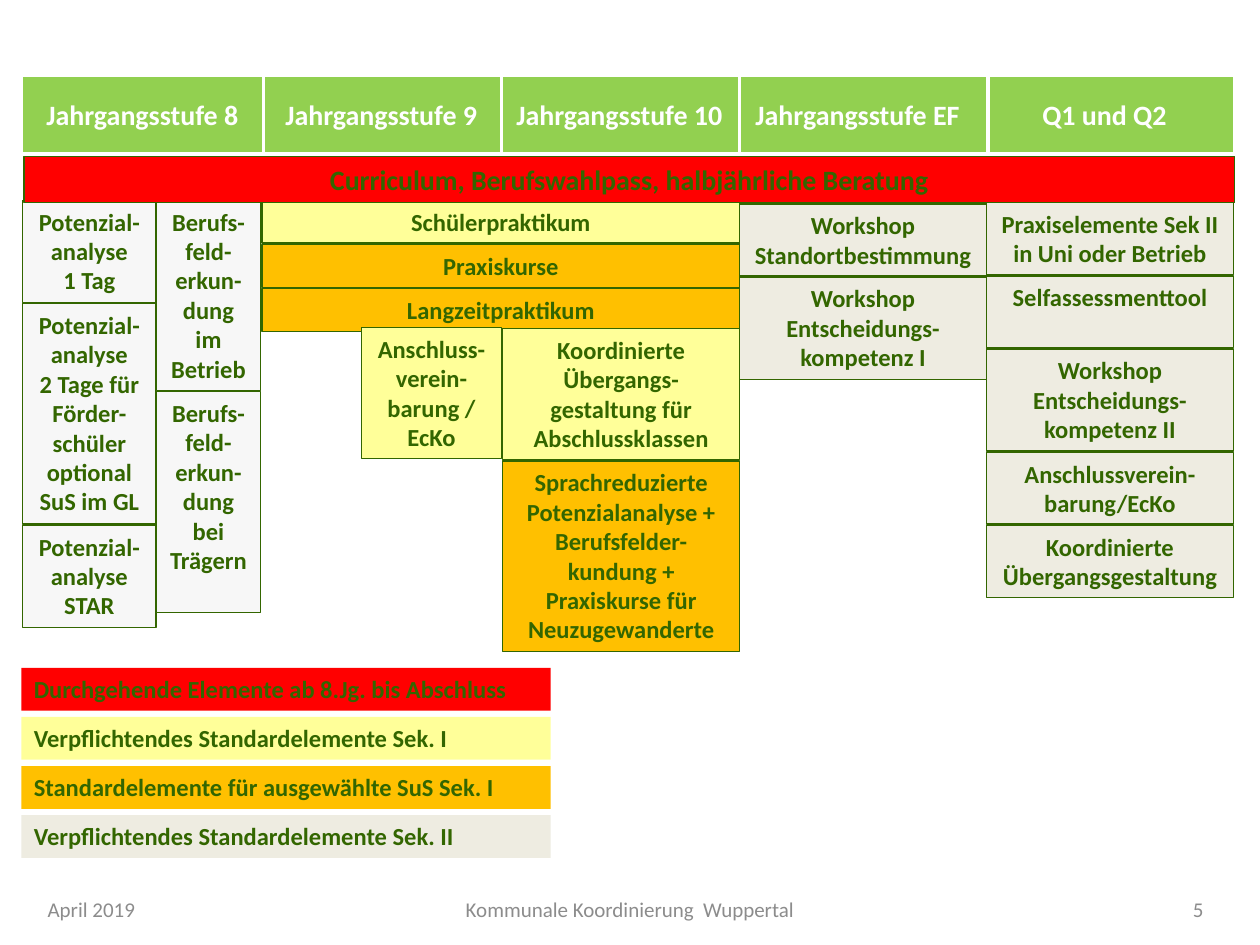
from pptx import Presentation
from pptx.dml.color import RGBColor
from pptx.enum import shapes, text
from pptx.util import Inches, Pt

COLORS = {
    "header": "92D050", "white": "FFFFFF", "ink": "336600", "red": "FF0000",
    "yellow": "FFFF99", "orange": "FFC000", "pale": "F7F7F7",
    "beige": "EEECE1", "footer": "8C8C8C",
}
GRADES = [
    ("Jahrgangsstufe 8 ", 0.17, 0.1),
    ("Jahrgangsstufe 9", 2.09, 0),
    ("Jahrgangsstufe 10", 3.98, 0),
    ("Q1 und Q2", 7.83, 0),
    ("Jahrgangsstufe EF", 5.87, 0),
]
SEK_ONE = [
    (0.18, 1.59, 1.06, [
        ("Potenzial-analyse\n1 Tag", 0.81, "pale"),
        ("Potenzial-analyse\n2 Tage für Förder-schüler optional SuS im GL", 1.75, "pale"),
        ("Potenzial-analyse STAR", 0.81, "pale"),
    ]),
    (1.24, 1.59, 0.83, [
        ("Berufs-feld-erkun-dung\nim Betrieb", 1.51, "pale"),
        ("Berufs-feld-erkun-dung bei Trägern", 1.75, "pale"),
    ]),
    (2.08, 1.59, 3.79, [
        ("Schülerpraktikum", 0.34, "yellow"),
        ("Praxiskurse", 0.34, "orange"),
        ("Langzeitpraktikum", 0.34, "orange"),
    ]),
    (2.87, 2.6, 1.11, [
        ("Anschluss- verein-barung /\nEcKo", 1.04, "yellow"),
    ]),
    (3.99, 2.61, 1.88, [
        ("Koordinierte Übergangs-gestaltung für Abschlussklassen", 1.04, "yellow"),
        ("Sprachreduzierte Potenzialanalyse +\n"
         "Berufsfelder-kundung + Praxiskurse für Neuzugewanderte", 1.51, "orange"),
    ]),
]
CURRICULUM = [(0.19, 1.24, 9.61, [
    ("Curriculum, Berufswahlpass, halbjährliche Beratung", 0.37, "red"),
])]
SEK_TWO = [
    (5.87, 1.62, 1.96, [
        ("Workshop Standortbestimmung", 0.57, "beige"),
        ("Workshop Entscheidungs-kompetenz I", 0.81, "beige"),
    ]),
    (7.83, 1.61, 1.96, [
        ("Praxiselemente Sek II in Uni oder Betrieb", 0.57, "beige"),
        ("Selfassessmenttool", 0.57, "beige"),
        ("Workshop Entscheidungs-kompetenz II", 0.81, "beige"),
        ("Anschlussverein-barung/EcKo", 0.57, "beige"),
        ("Koordinierte Übergangsgestaltung", 0.57, "beige"),
    ]),
]
LEGEND = [
    ("Durchgehende Elemente ab 8.Jg. bis Abschluss", "red"),
    ("Verpflichtendes Standardelemente Sek. I", "yellow"),
    ("Standardelemente für ausgewählte SuS Sek. I", "orange"),
    ("Verpflichtendes Standardelemente Sek. II", "beige"),
]
LEFT, CENTER, RIGHT = text.PP_ALIGN.LEFT, text.PP_ALIGN.CENTER, text.PP_ALIGN.RIGHT
FOOTER = [
    ("April 2019", 0.28, 1.26, LEFT),
    ("Kommunale Koordinierung  Wuppertal", 3.03, 3.94, CENTER),
    ("5", 8.39, 1.26, RIGHT),
]
TOP, MIDDLE = text.MSO_ANCHOR.TOP, text.MSO_ANCHOR.MIDDLE
STACK_GAP = 0.01


def rgb(name):
    return RGBColor.from_string(COLORS[name])


def add_label(slide, words, box, fill=None, line=None, line_width=0.75, color="ink",
              size=14, bold=True, align=CENTER, anchor=TOP, inset=0.1):
    bounds = [Inches(value) for value in box]
    if fill:
        label = slide.shapes.add_shape(shapes.MSO_SHAPE.RECTANGLE, *bounds)
        label.shadow.inherit = False
        label.fill.solid()
        label.fill.fore_color.rgb = rgb(fill)
        if line:
            label.line.color.rgb = rgb(line)
            label.line.width = Pt(line_width)
        else:
            label.line.fill.background()
    else:
        label = slide.shapes.add_textbox(*bounds)
    frame = label.text_frame
    frame.word_wrap = True
    frame.vertical_anchor = anchor
    frame.margin_left = Inches(inset)
    frame.text = words
    for paragraph in frame.paragraphs:
        paragraph.alignment = align
        paragraph.font.name = "Calibri"
        paragraph.font.size = Pt(size)
        paragraph.font.bold = bold
        paragraph.font.color.rgb = rgb(color)


def add_stacks(slide, stacks, size=14):
    for left, top, width, elements in stacks:
        for words, height, fill in elements:
            add_label(slide, words, (left, top, width, height),
                      fill=fill, line="ink", size=size)
            top += height + STACK_GAP


def main():
    deck = Presentation()
    deck.slide_width, deck.slide_height = Inches(10), Inches(7.5)
    slide = deck.slides.add_slide(deck.slide_layouts[6])

    for words, left, width, align in FOOTER:
        add_label(slide, words, (left, 7.06, width, 0.31), color="footer",
                  size=12, bold=False, align=align, anchor=MIDDLE)
    for words, left, inset in GRADES:
        add_label(slide, words, (left, 0.6, 1.97, 0.62), fill="header", line="white",
                  line_width=2, color="white", size=16, anchor=MIDDLE, inset=inset)
    add_stacks(slide, SEK_ONE)
    add_stacks(slide, CURRICULUM, size=16)
    add_stacks(slide, SEK_TWO)
    for row, (words, fill) in enumerate(LEGEND):
        add_label(slide, words, (0.17, 5.3 + row * 0.39, 4.2, 0.34),
                  fill=fill, align=LEFT)

    deck.save("out.pptx")


if __name__ == "__main__":
    main()
